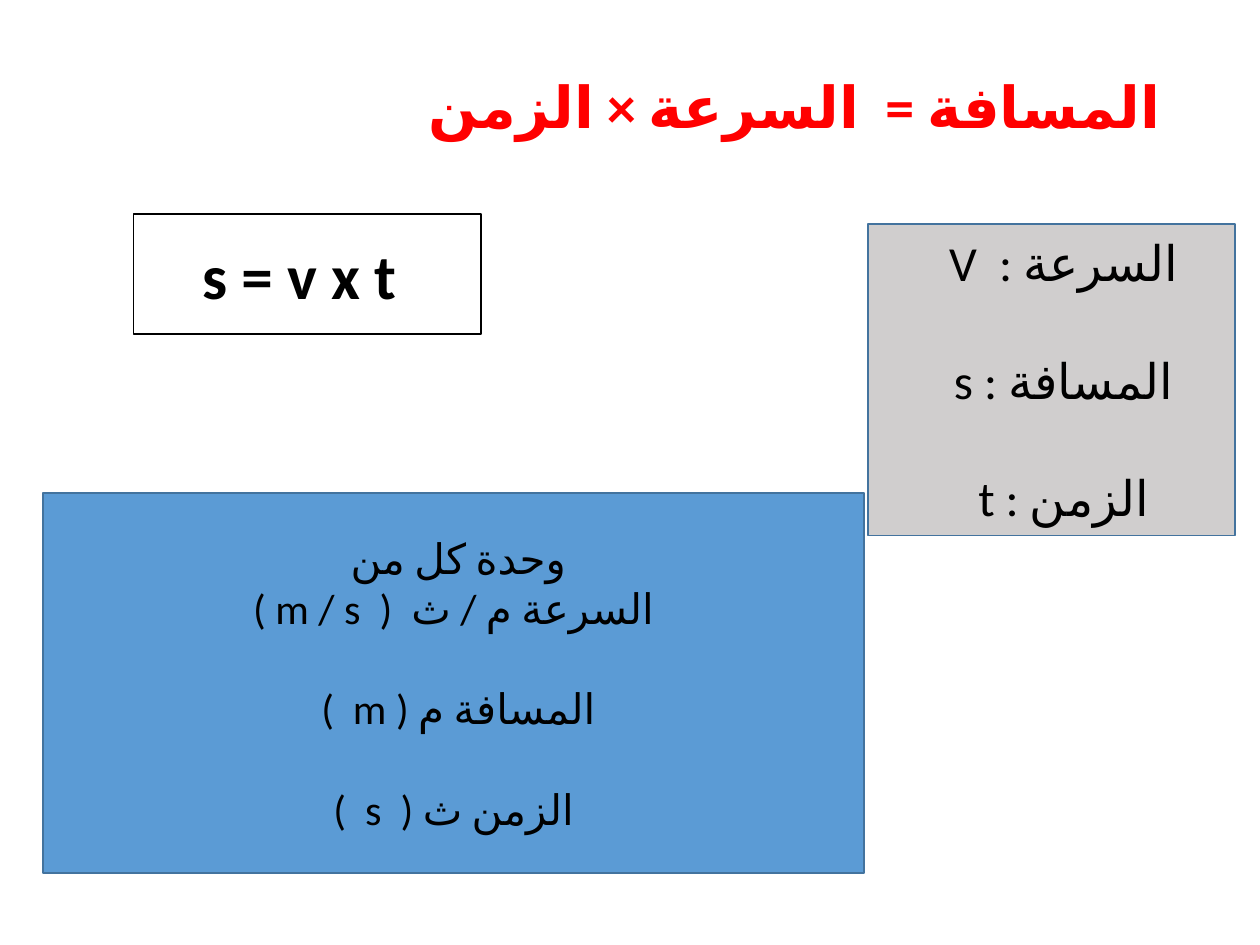
from lxml import etree
from pptx import Presentation
from pptx import util as u
from pptx.dml.color import RGBColor
from pptx.enum import shapes, text
from pptx.oxml import ns

FONT = "Calibri"
COLOURS = {
    "black": "000000",
    "white": "FFFFFF",
    "red": "FF0000",
    "grey": "D0CECE",
    "blue": "5B9BD5",
    "border": "43739E",
}


def colour(name):
    return RGBColor.from_string(COLOURS[name])


def write_line(para, words, size, tint="black", bold=False, before=0,
               align=text.PP_ALIGN.CENTER, rtl=True):
    para.alignment = align
    para.space_before = u.Pt(before)
    if rtl:
        para._p.get_or_add_pPr().set("rtl", "1")
    span = para.add_run()
    span.text = words
    span.font.name = FONT
    span.font.size = u.Pt(size)
    span.font.bold = bold
    span.font.color.rgb = colour(tint)
    format_xml = span._r.get_or_add_rPr()
    format_xml.set("lang", "ar-SA")
    etree.SubElement(format_xml, ns.qn("a:cs"), typeface=FONT)


class LessonSlide:
    def __init__(self, page):
        self.page = page

    def frame(self, box, left=0.1, right=0.1, bottom=0.05):
        """Set wrapping, middle anchor and insets in inches."""
        frame = box.text_frame
        frame.word_wrap = True
        frame.vertical_anchor = text.MSO_ANCHOR.MIDDLE
        frame.margin_left = u.Inches(left)
        frame.margin_right = u.Inches(right)
        frame.margin_bottom = u.Inches(bottom)
        return frame

    def title(self, words, place):
        box = self.page.shapes.add_textbox(*map(u.Inches, place))
        para = self.frame(box, bottom=0.55).paragraphs[0]
        para.line_spacing = 0.9
        write_line(para, words, 33, "red", bold=True,
                   align=text.PP_ALIGN.RIGHT, rtl=False)

    def panel(self, lines, place, fill, border, size, bold=False, **insets):
        """Draw a box; lines are pairs of words and space before in points."""
        box = self.page.shapes.add_shape(
            shapes.MSO_SHAPE.RECTANGLE, *map(u.Inches, place))
        box.shadow.inherit = False
        box.fill.solid()
        box.fill.fore_color.rgb = colour(fill)
        box.line.color.rgb = colour(border)
        box.line.width = u.Pt(1)
        frame = self.frame(box, **insets)
        for index, (words, before) in enumerate(lines):
            para = frame.add_paragraph() if index else frame.paragraphs[0]
            write_line(para, words, size, bold=bold, before=before)


def main():
    deck = Presentation()
    deck.slide_width, deck.slide_height = u.Inches(10), u.Inches(7.5)
    slide = LessonSlide(deck.slides.add_slide(deck.slide_layouts[6]))

    slide.title("المسافة =  السرعة × الزمن", (0.69, 0.4, 8.62, 1.45))
    slide.panel([("السرعة :  V", 0), ("المسافة : s", 33.5), ("الزمن : t", 33.5)],
                (6.89, 1.78, 2.91, 2.47), "grey", "border", 28, left=0.29)
    slide.panel([("s = v x t", 0)], (1.06, 1.7, 2.76, 0.95),
                "white", "black", 36, bold=True, right=0.23)
    slide.panel([("وحدة كل من ", 0), ("السرعة م / ث  (  m / s )", 0),
                 ("المسافة م ( m  ) ", 28.5), ("الزمن ث (  s  )", 28.5)],
                (0.34, 3.91, 6.52, 3.02), "blue", "border", 24)

    deck.save("out.pptx")


if __name__ == "__main__":
    main()
